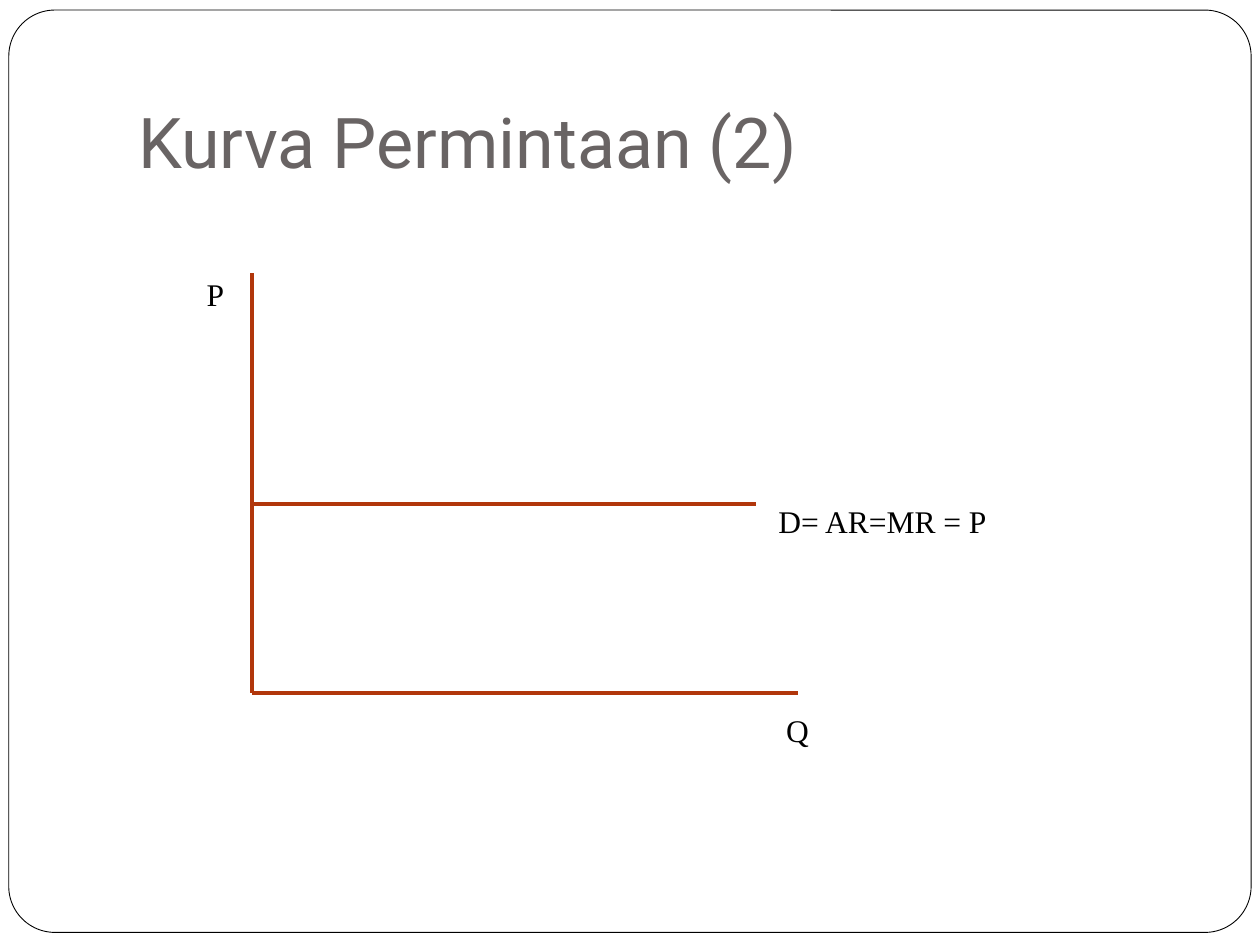
from lxml import etree
from pptx import Presentation
from pptx.dml.color import RGBColor
from pptx.enum import shapes, text
from pptx.oxml import ns
from pptx.util import Inches, Pt


def color(hex_code):
    return RGBColor.from_string(hex_code)


def write(holder, wording, font, size, ink, align, anchor):
    frame = holder.text_frame
    frame.word_wrap = True
    frame.vertical_anchor = anchor
    paragraph = frame.paragraphs[0]
    paragraph.alignment = align
    run = paragraph.add_run()
    run.text = wording
    run.font.name = font
    run.font.size = Pt(size)
    run.font.color.rgb = color(ink)


def add_panel(slide, kind, left, top, width, height):
    panel = slide.shapes.add_shape(
        kind, Inches(left), Inches(top), Inches(width), Inches(height))
    panel.shadow.inherit = False
    panel.fill.solid()
    panel.fill.fore_color.rgb = color("FFFFFF")
    panel.line.fill.background()
    return panel


def add_frame(slide, left, top, width, height):
    frame = add_panel(slide, shapes.MSO_SHAPE.ROUNDED_RECTANGLE,
                      left, top, width, height)
    frame.adjustments[0] = 0.05
    frame.line.color.rgb = color("000000")
    frame.line.width = Pt(0.5)


def add_title(slide, left, top, width, height):
    title = slide.shapes.add_textbox(
        Inches(left), Inches(top), Inches(width), Inches(height))
    title.text_frame.margin_bottom = Inches(0.1)
    write(title, "Kurva Permintaan (2)", "Roboto", 40, "696464",
          text.PP_ALIGN.LEFT, text.MSO_ANCHOR.BOTTOM)


def add_curve(slide, x1, y1, x2, y2):
    curve = slide.shapes.add_connector(
        shapes.MSO_CONNECTOR.STRAIGHT,
        Inches(x1), Inches(y1), Inches(x2), Inches(y2))
    curve.line.color.rgb = color("B1360B")
    curve.line.width = Pt(2.25)
    etree.SubElement(curve._element.spPr, ns.qn("a:effectLst"))


def add_label(slide, wording, left, top, width, height,
              align=text.PP_ALIGN.CENTER):
    label = add_panel(slide, shapes.MSO_SHAPE.RECTANGLE,
                      left, top, width, height)
    write(label, wording, "Times New Roman", 18, "000000",
          align, text.MSO_ANCHOR.MIDDLE)


def add_demand_diagram(slide, left, top, width, height):
    right, bottom = left + width, top + height
    demand_y = bottom - 1.5

    # Price axis, quantity axis, demand curve
    add_curve(slide, left, top, left, bottom)
    add_curve(slide, left, bottom, right, bottom)
    add_curve(slide, left, demand_y, left + 4, demand_y)

    # Labels
    add_label(slide, "P", left - 0.5, top, 0.42, 0.33)
    add_label(slide, "Q", right - 0.25, bottom + 0.08, 0.5, 0.42)
    add_label(slide, "D= AR=MR = P", right - 0.25, demand_y - 0.08, 2.25, 0.42,
              text.PP_ALIGN.LEFT)


def main():
    deck = Presentation()
    deck.slide_width, deck.slide_height = Inches(10), Inches(7.5)
    slide = deck.slides.add_slide(deck.slide_layouts[6])
    add_frame(slide, 0.07, 0.08, 9.86, 7.32)
    add_title(slide, 1, 0.3, 8.5, 1.25)
    add_demand_diagram(slide, 2, 2.17, 4.33, 3.33)
    deck.save("out.pptx")


if __name__ == "__main__":
    main()
